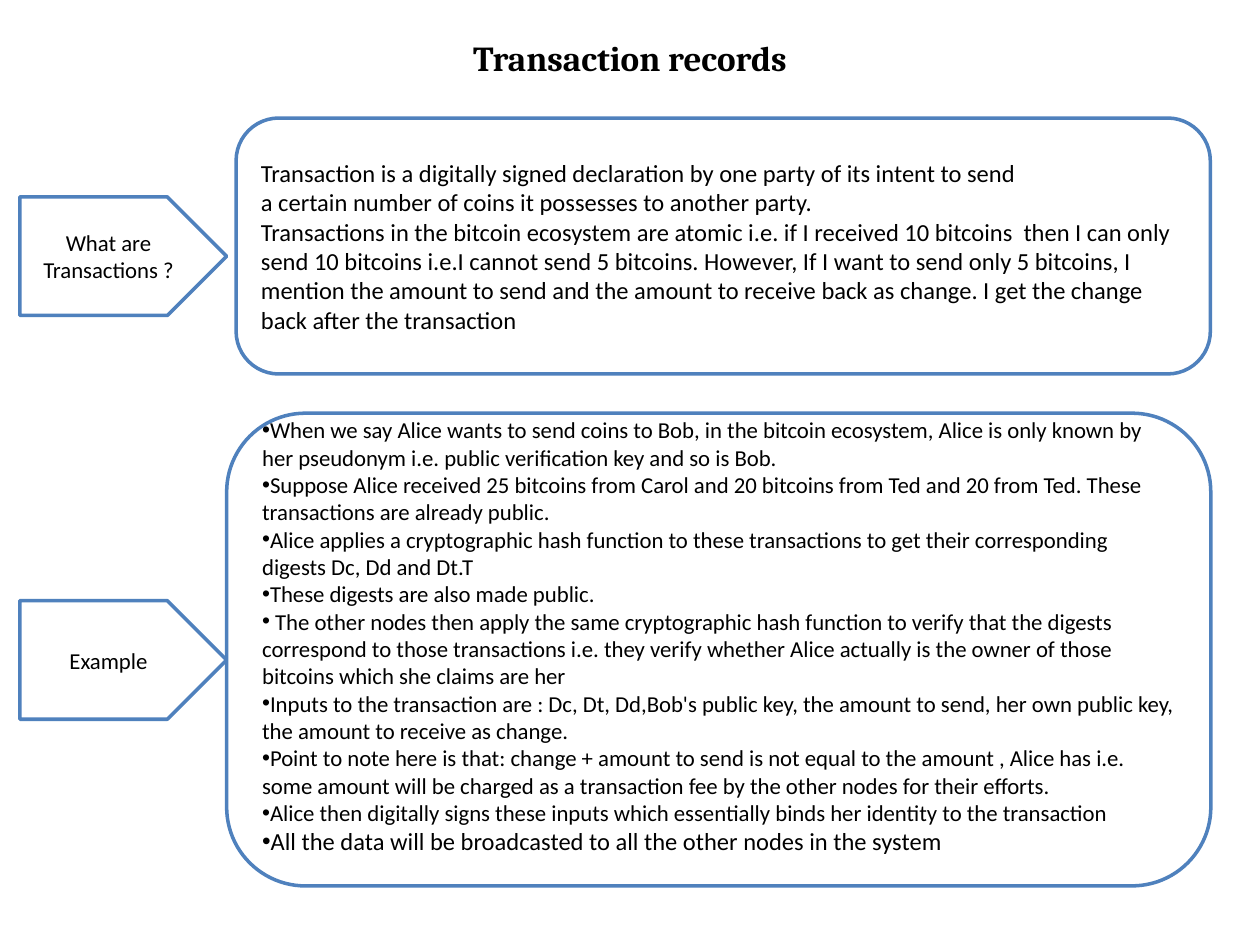
from pptx import Presentation
from pptx.dml.color import RGBColor
from pptx.enum.shapes import MSO_SHAPE as Preset
from pptx.enum.text import MSO_ANCHOR as Anchor, PP_ALIGN as Align
from pptx.oxml.ns import qn
from pptx.util import Cm, Pt
from lxml.etree import SubElement

BLACK = RGBColor(0x00, 0x00, 0x00)
WHITE = RGBColor(0xFF, 0xFF, 0xFF)
BLUE = RGBColor(0x4F, 0x81, 0xBD)

DEFINITION = [
    "Transaction is a digitally signed declaration by one party of its intent to send",
    "a certain number of coins it possesses to another party.",
    "Transactions in the bitcoin ecosystem are atomic i.e. if I received 10 bitcoins  then I can only "
    "send 10 bitcoins i.e.I cannot send 5 bitcoins. However, If I want to send only 5 bitcoins, I "
    "mention the amount to send and the amount to receive back as change. I get the change "
    "back after the transaction",
]
EXAMPLE = [
    "When we say Alice wants to send coins to Bob, in the bitcoin ecosystem, Alice is only known by "
    "her pseudonym i.e. public verification key and so is Bob.",
    "Suppose Alice received 25 bitcoins from Carol and 20 bitcoins from Ted and 20 from Ted. These "
    "transactions are already public.",
    "Alice applies a cryptographic hash function to these transactions to get their corresponding "
    "digests Dc, Dd and Dt.T",
    "These digests are also made public.",
    " The other nodes then apply the same cryptographic hash function to verify that the digests "
    "correspond to those transactions i.e. they verify whether Alice actually is the owner of those "
    "bitcoins which she claims are her",
    "Inputs to the transaction are : Dc, Dt, Dd,Bob's public key, the amount to send, her own public key, "
    "the amount to receive as change.",
    "Point to note here is that: change + amount to send is not equal to the amount , Alice has i.e. "
    "some amount will be charged as a transaction fee by the other nodes for their efforts.",
    "Alice then digitally signs these inputs which essentially binds her identity to the transaction",
    "All the data will be broadcasted to all the other nodes in the system",
]


class SlideBuilder:
    body_font = "Calibri"
    title_font = "Cambria"

    def __init__(self, slide):
        self.slide = slide

    def style(self, paragraph, size, align, name=body_font, bold=False):
        paragraph.alignment = align
        paragraph.font.name = name
        paragraph.font.size = Pt(size)
        paragraph.font.bold = bold
        paragraph.font.color.rgb = BLACK

    def title(self, text, left, top, width, height):
        shape = self.slide.shapes.title
        shape.left, shape.top, shape.width, shape.height = map(Cm, (left, top, width, height))
        frame = shape.text_frame
        frame.text = text
        frame.vertical_anchor = Anchor.MIDDLE
        self.style(frame.paragraphs[0], 20, Align.CENTER, self.title_font, True)

    def outlined(self, preset, box, texts, size, align):
        shape = self.slide.shapes.add_shape(preset, *map(Cm, box))
        shape.shadow.inherit = False
        shape.fill.solid()
        shape.fill.fore_color.rgb = WHITE
        shape.line.color.rgb = BLUE
        shape.line.width = Pt(2)
        frame = shape.text_frame
        frame.word_wrap = True
        frame.vertical_anchor = Anchor.MIDDLE
        frame.text = "\n".join(texts)
        for paragraph in frame.paragraphs:
            self.style(paragraph, size, align)
        return frame

    def panel(self, box, texts, size):
        return self.outlined(Preset.ROUNDED_RECTANGLE, box, texts, size, Align.LEFT)

    def bullet_panel(self, box, texts, size):
        frame = self.panel(box, texts, size)
        for paragraph in frame.paragraphs:
            properties = paragraph._p.get_or_add_pPr()
            bullet = properties.makeelement(qn("a:buChar"), {"char": "•"})
            properties.insert_element_before(bullet, "a:tabLst", "a:defRPr", "a:extLst")
            font = properties.makeelement(qn("a:buFont"), {"typeface": "Arial"})
            bullet.addprevious(font)
        return frame

    def label(self, top, text):
        self.outlined(Preset.PENTAGON, (0.4, top, 4.17, 2.39), [text], 13, Align.CENTER)


def main():
    presentation = Presentation()
    presentation.slide_width, presentation.slide_height = Cm(25.4), Cm(19.05)
    builder = SlideBuilder(presentation.slides.add_slide(presentation.slide_layouts[5]))

    builder.title("Transaction records", 1.27, 0.76, 22.86, 0.81)
    example = builder.bullet_panel((4.57, 8.33, 19.84, 9.53), EXAMPLE, 13)
    example.margin_bottom = Cm(0.68)
    example.paragraphs[-1].font.size = Pt(14)
    builder.panel((4.76, 2.38, 19.64, 5.16), DEFINITION, 14)
    builder.label(3.97, "What are Transactions ?")
    builder.label(12.11, "Example")

    presentation.save("out.pptx")


if __name__ == "__main__":
    main()
